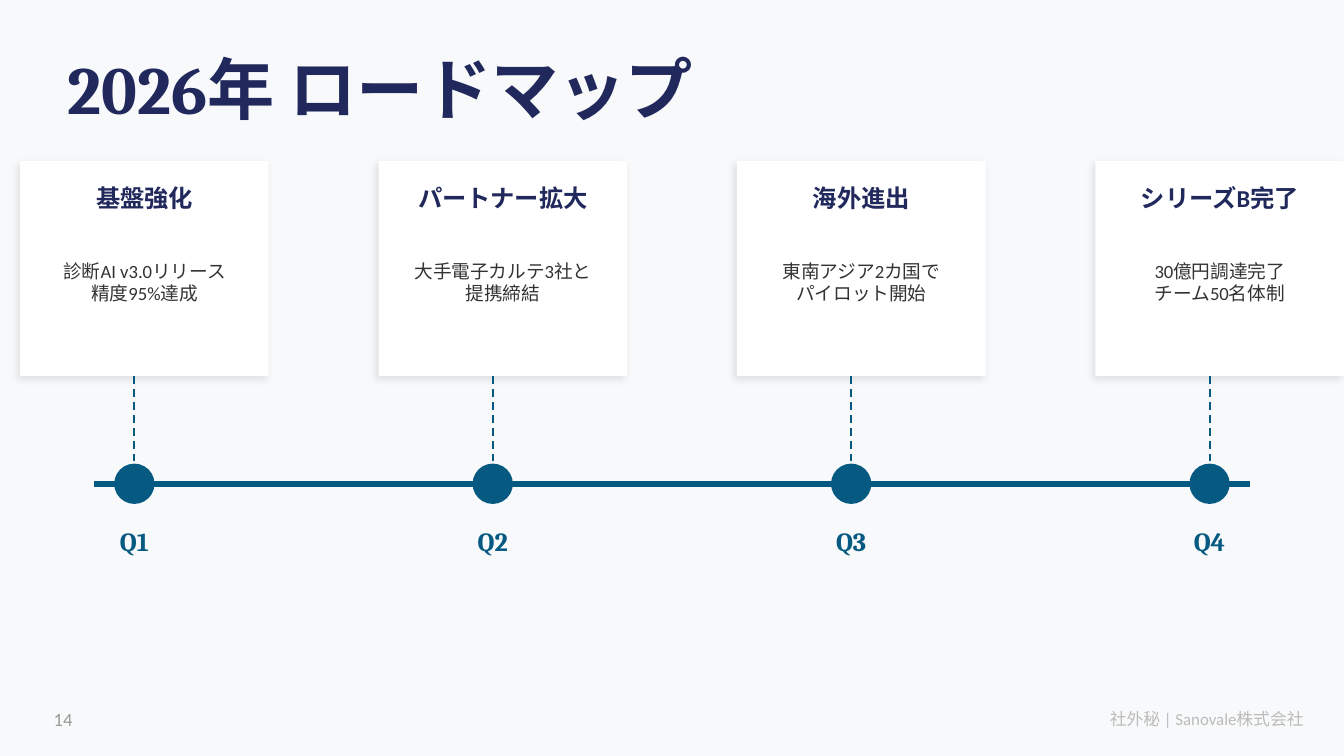
"""Build the 2026 roadmap slide."""
from lxml import etree
from pptx import Presentation
from pptx import util as u
from pptx.dml.color import RGBColor
from pptx.enum import dml, shapes, text
from pptx.oxml import parse_xml
from pptx.oxml.ns import nsdecls, qn

NAVY, TEAL, INK = "21295C", "065A82", "333333"
QUARTERS = [
    ("Q1", "基盤強化", ["診断AI v3.0リリース", "精度95%達成"]),
    ("Q2", "パートナー拡大", ["大手電子カルテ3社と", "提携締結"]),
    ("Q3", "海外進出", ["東南アジア2カ国で", "パイロット開始"]),
    ("Q4", "シリーズB完了", ["30億円調達完了", "チーム50名体制"]),
]
AXIS_Y, FIRST_X, LAST_X = 3.6, 1, 9
CARD_TOP, CARD_W, CARD_H = 1.2, 1.85, 1.6
DOT = 0.3


def rgb(value):
    """Return a colour from a hex string."""
    return RGBColor.from_string(value)


def inches(*values):
    """Return the lengths in inches."""
    return [u.Inches(v) for v in values]


def fill_text(sp, lines, size, color, font="Calibri", bold=False, align=text.PP_ALIGN.LEFT):
    """Write the lines as paragraphs in a shape without margins."""
    tf = sp.text_frame
    tf.word_wrap = True
    tf.auto_size = text.MSO_AUTO_SIZE.NONE
    tf.vertical_anchor = text.MSO_ANCHOR.MIDDLE
    tf.margin_left = tf.margin_top = tf.margin_right = tf.margin_bottom = 0
    for i, line in enumerate(lines):
        p = tf.add_paragraph() if i else tf.paragraphs[0]
        p.alignment = align
        r = p.add_run()
        r.text = line
        r.font.name, r.font.size, r.font.bold = font, u.Pt(size), bold
        r.font.color.rgb = rgb(color)


def add_title(s, title):
    """Place and format the title placeholder."""
    sp = s.shapes.title
    sp.left, sp.top, sp.width, sp.height = inches(0.5, 0.3, 9, 0.7)
    fill_text(sp, [title], 36, NAVY, "Cambria", True)


def add_label(s, box, lines, size, color, **style):
    """Add a text box."""
    fill_text(s.shapes.add_textbox(*inches(*box)), lines, size, color, **style)


def add_block(s, kind, box, color):
    """Add a filled shape without outline or shadow."""
    sp = s.shapes.add_shape(kind, *inches(*box))
    sp.shadow.inherit = False
    sp.fill.solid()
    sp.fill.fore_color.rgb = rgb(color)
    sp.line.fill.background()
    return sp


def add_soft_shadow(sp):
    """Give a shape a faint shadow to the lower left."""
    effects = sp._element.spPr.find(qn("a:effectLst"))
    effects.append(parse_xml(
        f'<a:outerShdw {nsdecls("a")} blurRad="{u.Pt(4)}" dist="{u.Pt(2)}" dir="8100000" '
        'algn="bl" rotWithShape="0"><a:srgbClr val="000000"><a:alpha val="10000"/>'
        '</a:srgbClr></a:outerShdw>'))


def add_line(s, start, end, width):
    """Add a straight teal line."""
    line = s.shapes.add_connector(shapes.MSO_CONNECTOR.STRAIGHT, *inches(*start, *end))
    line.line.color.rgb = rgb(TEAL)
    line.line.width = u.Pt(width)
    etree.SubElement(line._element.spPr, qn("a:effectLst"))
    return line


def add_quarter(s, x, quarter, heading, details):
    """Add one milestone with its dot, card and dashed link."""
    center = text.PP_ALIGN.CENTER
    left = x - 0.85
    dot_top = AXIS_Y - DOT / 2
    dot = add_block(s, shapes.MSO_SHAPE.OVAL, (x - DOT / 2, dot_top, DOT, DOT), TEAL)
    add_label(s, (x - 0.5, 3.85, 1, 0.35), [quarter], 14, TEAL,
              font="Cambria", bold=True, align=center)
    card = add_block(s, shapes.MSO_SHAPE.RECTANGLE, (left, CARD_TOP, CARD_W, CARD_H), "FFFFFF")
    add_soft_shadow(card)
    add_label(s, (left, CARD_TOP + 0.1, CARD_W, 0.35), [heading], 13, NAVY,
              bold=True, align=center)
    add_label(s, (left + 0.1, CARD_TOP + 0.55, CARD_W - 0.2, 0.7), details, 10, INK,
              align=center)
    link = add_line(s, (x, CARD_TOP + CARD_H), (x, dot_top), 1)
    link.line.dash_style = dml.MSO_LINE.DASH
    link.end_connect(dot, 0)


def main():
    """Build and save the slide."""
    prs = Presentation()
    prs.slide_width, prs.slide_height = inches(10, 5.625)
    s = prs.slides.add_slide(prs.slide_layouts[5])
    s.background.fill.solid()
    s.background.fill.fore_color.rgb = rgb("F8F9FA")
    add_title(s, "2026年 ロードマップ")
    add_line(s, (0.7, AXIS_Y), (9.3, AXIS_Y), 3)
    step = (LAST_X - FIRST_X) / (len(QUARTERS) - 1)
    for i, quarter in enumerate(QUARTERS):
        add_quarter(s, FIRST_X + i * step, *quarter)
    add_label(s, (0.4, 5.2, 0.5, 0.3), ["14"], 10, "999999")
    add_label(s, (7, 5.2, 2.7, 0.3), ["社外秘 | Sanovale株式会社"], 9, "BBBBBB",
              align=text.PP_ALIGN.RIGHT)
    prs.save("out.pptx")


if __name__ == "__main__":
    main()
